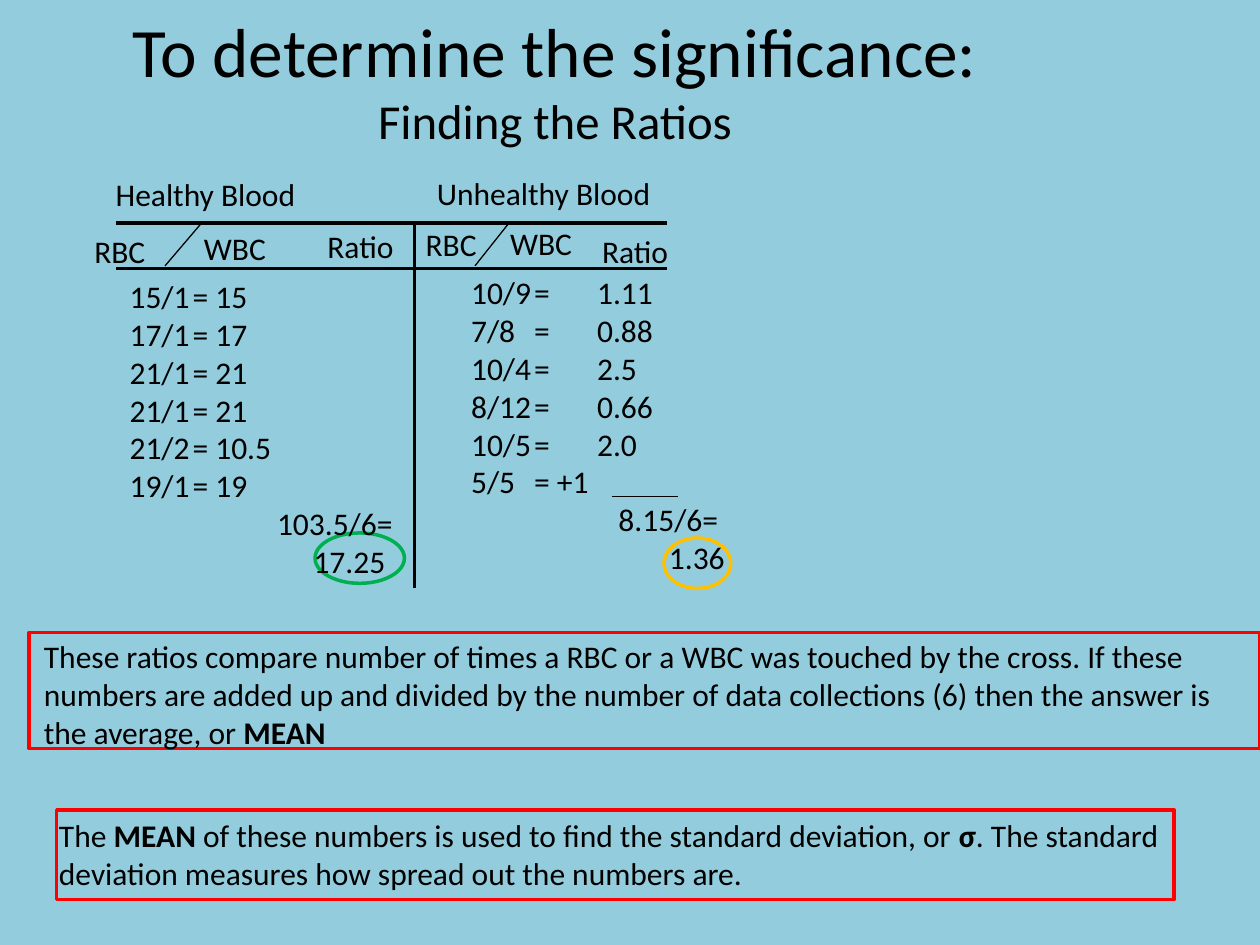
from dataclasses import dataclass
from lxml.etree import SubElement
from pptx import Presentation
from pptx.dml.color import RGBColor
from pptx.enum.shapes import MSO_CONNECTOR as Connector, MSO_SHAPE as Preset
from pptx.enum.text import MSO_ANCHOR as Anchor, MSO_AUTO_SIZE as AutoSize, PP_ALIGN as Align
from pptx.oxml.ns import qn
from pptx.util import Inches, Pt


@dataclass(frozen=True)
class Theme:
    font: str = "Calibri"
    background: str = "93CDDD"
    ink: str = "000000"
    frame: str = "FF0000"
    healthy: str = "00B050"
    unhealthy: str = "FFC000"
    title: float = 39.6
    subtitle: float = 27.9
    body: float = 18
    thin: float = 0.75
    rule: float = 1.75
    outline: float = 2


THEME = Theme()
COLUMNS = 100
SLIDE_WIDTH, SLIDE_HEIGHT = Inches(10), Inches(7.5)

HEALTHY = {
    "labels": [("Healthy Blood", (8.2, 13.4, 20, 4)), ("RBC", (6.5, 17.9, 6.7, 4)),
               ("WBC", (15.2, 17.7, 7.5, 4)), ("Ratio", (25, 17.5, 8.9, 4))],
    "slash": (16, 17.7, 13.1, 21.1),
    "circle": (25, 42.3, 7.1, 4),
    "colour": THEME.healthy,
    "ratios": ["15/1\t= 15", "17/1\t= 17", "21/1\t= 21", "21/1\t= 21", "21/2\t= 10.5", "19/1\t= 19"],
    "results": [("103.5/6=", 11.7), ("17.25", 14.6)],
    "list": (9.3, 21.5, 24.1, 25.2),
}
UNHEALTHY = {
    "labels": [("Unhealthy Blood", (33.7, 13.3, 20, 4)), ("RBC", (32.8, 17.4, 6.7, 4)),
               ("WBC", (39.5, 17.3, 7.5, 4)), ("Ratio", (46.8, 17.9, 8.9, 4))],
    "slash": (40.4, 17.7, 37.7, 21.1),
    "circle": (52.7, 42.7, 5.3, 4),
    "colour": THEME.unhealthy,
    "ratios": ["10/9\t=\t1.11", "7/8\t=\t0.88", "10/4\t=\t2.5", "8/12\t=\t0.66", "10/5\t=\t2.0", "5/5\t= +1"],
    "results": [("8.15/6=", 11.7), ("1.36", 15.7)],
    "list": (36.4, 21.2, 23.9, 25.2),
}


def grid(*cells):
    return [round(cell * SLIDE_WIDTH / COLUMNS) for cell in cells]


def add_run(paragraph, text, size=THEME.body, bold=False):
    run = paragraph.add_run()
    run.text = text
    run.font.name = THEME.font
    run.font.size = Pt(size)
    run.font.bold = bold
    run.font.color.rgb = RGBColor.from_string(THEME.ink)


def set_layout(paragraph, indent=0, stops=()):
    properties = paragraph._p.get_or_add_pPr()
    properties.set("marL", str(grid(indent)[0]))
    properties.set("indent", "0")
    if stops:
        tabs = SubElement(properties, qn("a:tabLst"))
        for position in grid(*stops):
            SubElement(tabs, qn("a:tab"), pos=str(position), algn="l")


def add_text(slide, cells, paragraphs):
    box = slide.shapes.add_textbox(*grid(*cells))
    frame = box.text_frame
    frame.word_wrap = True
    frame.auto_size = AutoSize.SHAPE_TO_FIT_TEXT
    for index, (runs, layout) in enumerate(paragraphs):
        paragraph = frame.add_paragraph() if index else frame.paragraphs[0]
        set_layout(paragraph, **layout)
        for text, bold in runs:
            add_run(paragraph, text, bold=bold)


def add_outline(slide, preset, cells, colour):
    shape = slide.shapes.add_shape(preset, *grid(*cells))
    shape.shadow.inherit = False
    shape.fill.background()
    shape.line.color.rgb = RGBColor.from_string(colour)
    shape.line.width = Pt(THEME.outline)


def add_line(slide, cells, width):
    line = slide.shapes.add_connector(Connector.STRAIGHT, *grid(*cells))
    line.line.color.rgb = RGBColor.from_string(THEME.ink)
    line.line.width = Pt(width)
    SubElement(line._element.spPr, qn("a:effectLst"))


def add_title(slide, cells, title, subtitle):
    shape = slide.shapes.title
    shape.left, shape.top, shape.width, shape.height = grid(*cells)
    frame = shape.text_frame
    frame.auto_size = AutoSize.NONE
    frame.vertical_anchor = Anchor.MIDDLE
    paragraph = frame.paragraphs[0]
    paragraph.alignment = Align.CENTER
    add_run(paragraph, title, size=THEME.title)
    paragraph.add_line_break()
    add_run(paragraph, subtitle, size=THEME.subtitle)


def add_sample(slide, sample):
    add_outline(slide, Preset.OVAL, sample["circle"], sample["colour"])
    add_line(slide, sample["slash"], THEME.thin)
    for text, cells in sample["labels"]:
        add_text(slide, cells, [([(text, False)], {})])
    rows = [([(ratio, False)], {"stops": (10, 12.4)}) for ratio in sample["ratios"]]
    rows += [([(result, False)], {"indent": indent}) for result, indent in sample["results"]]
    add_text(slide, sample["list"], rows)


def add_note(slide, frame_cells, text_cells, runs):
    add_outline(slide, Preset.RECTANGLE, frame_cells, THEME.frame)
    add_text(slide, text_cells, [(runs, {})])


def main():
    presentation = Presentation()
    presentation.slide_width, presentation.slide_height = SLIDE_WIDTH, SLIDE_HEIGHT
    slide = presentation.slides.add_slide(presentation.slide_layouts.get_by_name("Title Only"))
    slide.background.fill.solid()
    slide.background.fill.fore_color.rgb = RGBColor.from_string(THEME.background)

    add_title(slide, (-4.9, 0, 97.9, 12.5), "To determine the significance:", "Finding the Ratios")
    add_note(slide, (2.3, 50.2, 97.7, 9.2), (2.5, 50.1, 97.5, 10.1), [
        ("These ratios compare number of times a RBC or a WBC was touched by the cross. "
         "If these numbers are added up and divided by the number of data collections (6) "
         "then the answer is the average, or ", False),
        ("MEAN", True)])
    add_note(slide, (4.5, 64.3, 88.7, 7.1), (3.7, 64.3, 98.4, 7.1), [
        ("The ", False), ("MEAN", True),
        (" of these numbers is used to find the standard deviation, or ", False),
        ("σ", True),
        (". The standard deviation measures how spread out the numbers are.", False)])

    for row in (17.7, 21.3):
        add_line(slide, (9.2, row, 52.9, row), THEME.rule)
    add_line(slide, (32.9, 17.6, 32.9, 46.7), THEME.rule)
    add_line(slide, (53.8, 39.4, 48.6, 39.4), THEME.thin)
    for sample in (HEALTHY, UNHEALTHY):
        add_sample(slide, sample)
    presentation.save("out.pptx")


if __name__ == "__main__":
    main()
